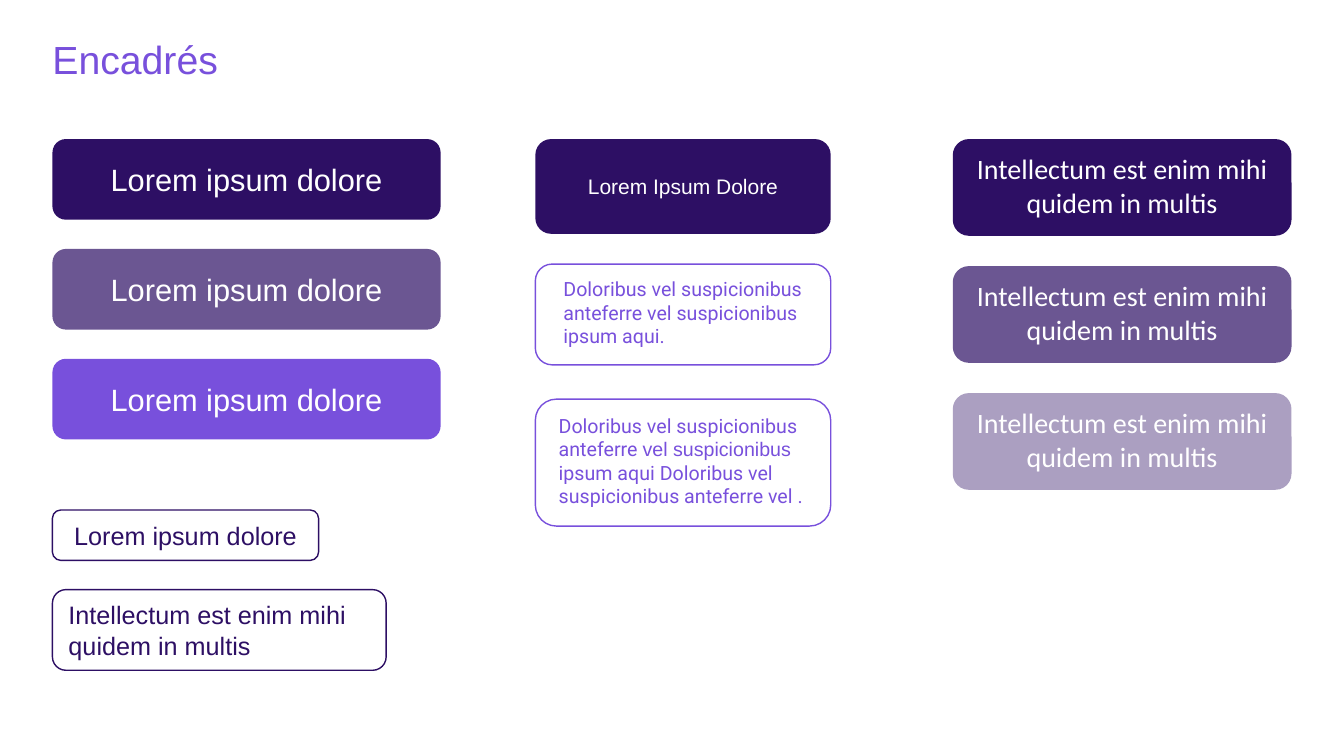
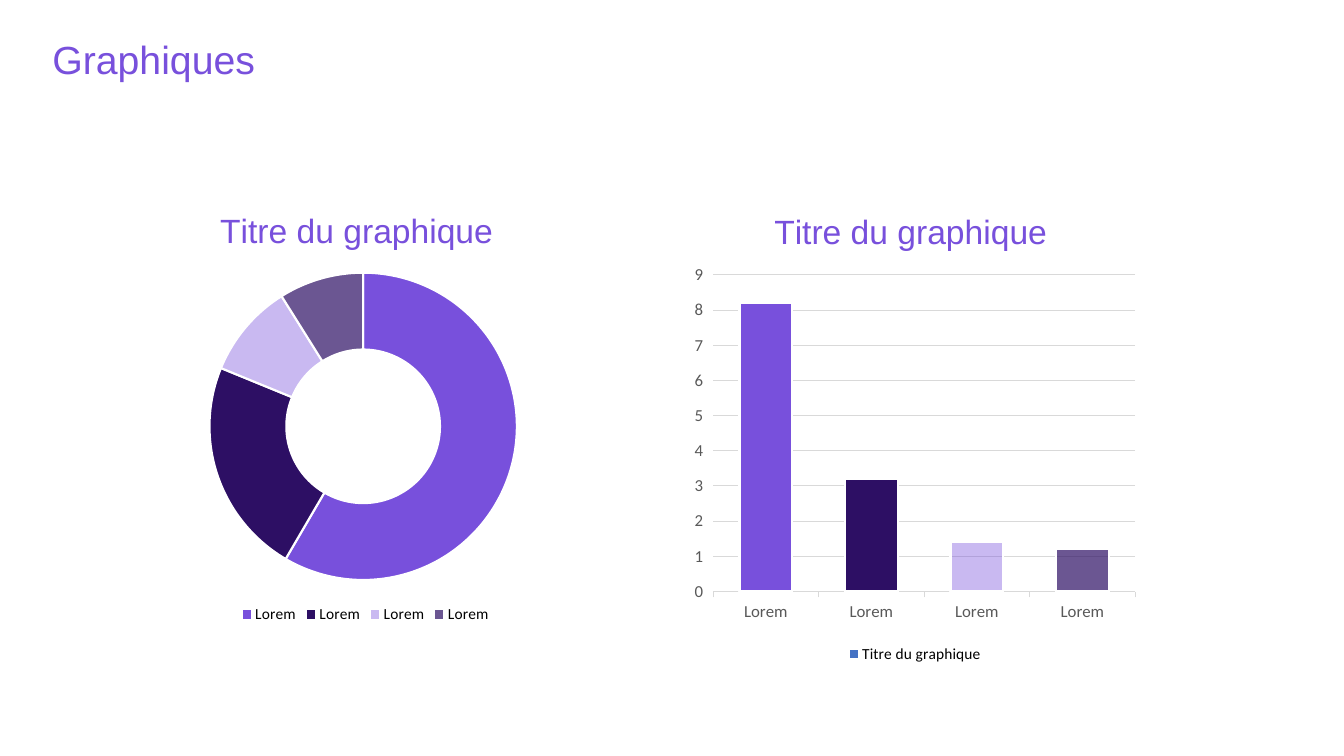
from lxml import etree
from pptx import Presentation
from pptx.chart.data import CategoryChartData
from pptx.dml.color import RGBColor
from pptx.enum import chart as ch, shapes, text
from pptx.oxml.ns import qn
from pptx.util import Inches, Pt

WHITE = RGBColor(0xFF, 0xFF, 0xFF)
BLACK = RGBColor(0x00, 0x00, 0x00)
VIOLET = RGBColor(0x78, 0x50, 0xDC)
INDIGO = RGBColor(0x2D, 0x0F, 0x64)
BLUE = RGBColor(0x44, 0x72, 0xC4)
GRAY = RGBColor(0x59, 0x59, 0x59)
GRID = RGBColor(0xD9, 0xD9, 0xD9)
POINT_FILLS = [(VIOLET, 100), (INDIGO, 100), (VIOLET, 40), (INDIGO, 70)]

LEFT, MID, RIGHT = 0.52, 5.31, 9.45
TOP = 1.38
NO_PAD = (0, 0, 0, 0)
PAD = (0.12, 0.08, 0.12, 0.12)
LOREM = "Lorem ipsum dolore"
INTELLECTUM = "Intellectum est enim mihi quidem in multis"
CHART_TITLE = "Titre du graphique"


def set_font(font, size, color, name="Arial"):
    font.size, font.name, font.bold = Pt(size), name, False
    font.color.rgb = color


def set_fill(fill, color, opacity=100):
    """Solid fill; opacity in percent."""
    fill.solid()
    fill.fore_color.rgb = color
    if opacity < 100:
        clr = fill._xPr.find(".//" + qn("a:srgbClr"))
        etree.SubElement(clr, qn("a:alpha"), val=str(opacity * 1000))


def set_line(line, color, width):
    line.color.rgb = color
    line.width = Pt(width)


def set_insets(tf, insets):
    tf.margin_left, tf.margin_top, tf.margin_right, tf.margin_bottom = map(Inches, insets)


def chart_layout(**values):
    """c:layout element from x, y, w, h as fractions of the chart."""
    layout = etree.Element(qn("c:layout"))
    manual = etree.SubElement(layout, qn("c:manualLayout"))
    if "w" in values:
        etree.SubElement(manual, qn("c:layoutTarget"), val="inner")
    for tag in ("xMode", "yMode"):
        etree.SubElement(manual, qn("c:" + tag), val="edge")
    for tag, value in values.items():
        etree.SubElement(manual, qn("c:" + tag), val=str(value))
    return layout


def place_chart_parts(chart, title_pos, plot_box):
    root = chart._chartSpace
    title, plot = (root.find(".//" + qn(tag)) for tag in ("c:title", "c:plotArea"))
    for part in (title, plot):
        for old in part.findall(qn("c:layout")):
            part.remove(old)
    title.find(qn("c:tx")).addnext(chart_layout(**dict(zip("xy", title_pos))))
    plot.insert(0, chart_layout(**dict(zip("xywh", plot_box))))


class Deck:
    def __init__(self):
        self.prs = Presentation()
        self.prs.slide_width, self.prs.slide_height = Inches(13.33), Inches(7.5)
        self.s = None

    def slide(self, title):
        self.s = self.prs.slides.add_slide(self.prs.slide_layouts[5])
        sp = self.s.shapes.title
        sp.left, sp.top, sp.width, sp.height = map(Inches, (LEFT, 0.4, 10.7, 0.42))
        tf = sp.text_frame
        tf.word_wrap = True
        tf.auto_size = text.MSO_AUTO_SIZE.NONE
        set_insets(tf, NO_PAD)
        p = tf.paragraphs[0]
        p.alignment, p.line_spacing = text.PP_ALIGN.LEFT, 0.9
        r = p.add_run()
        r.text = title
        set_font(r.font, 28, VIOLET)

    def box(self, at, content, size, font="Arial", fill=None, opacity=100,
            outline=None, center=True, insets=NO_PAD):
        """Rounded box, filled or outlined; content is a string or (text, font) runs."""
        sp = self.s.shapes.add_shape(shapes.MSO_SHAPE.ROUNDED_RECTANGLE, *map(Inches, at))
        sp.shadow.inherit = False
        if fill is None:
            sp.fill.background()
        else:
            set_fill(sp.fill, fill, opacity)
        if outline is None:
            sp.line.fill.background()
        else:
            set_line(sp.line, outline, 1)
        tf = sp.text_frame
        tf.word_wrap = True
        tf.vertical_anchor = text.MSO_ANCHOR.MIDDLE
        set_insets(tf, insets)
        p = tf.paragraphs[0]
        p.alignment = text.PP_ALIGN.CENTER if center else text.PP_ALIGN.LEFT
        for words, name in [(content, font)] if isinstance(content, str) else content:
            r = p.add_run()
            r.text = words
            set_font(r.font, size, outline or WHITE, name)

    def chart(self, kind, at, name, values, title_pos, plot_box):
        data = CategoryChartData()
        data.categories = ["Lorem"] * len(values)
        data.add_series(name, values)
        chart = self.s.shapes.add_chart(kind, *map(Inches, at), data).chart
        set_font(chart.font, 10, BLACK, "Calibri")
        chart.has_title = True
        r = chart.chart_title.text_frame.paragraphs[0].add_run()
        r.text = CHART_TITLE
        set_font(r.font, 24, VIOLET)
        chart.has_legend = True
        chart.legend.position = ch.XL_LEGEND_POSITION.BOTTOM
        chart.legend.include_in_layout = False
        set_font(chart.legend.font, 11, BLACK, "Calibri")
        series = chart.plots[0].series[0]
        set_fill(series.format.fill, BLUE)
        set_line(series.format.line, WHITE, 1.5)
        for i, (color, opacity) in enumerate(POINT_FILLS):
            fmt = series.points[i].format
            set_fill(fmt.fill, color, opacity)
            set_line(fmt.line, WHITE, 1.5)
        place_chart_parts(chart, title_pos, plot_box)
        return chart

    def column_chart(self, *args):
        chart = self.chart(ch.XL_CHART_TYPE.COLUMN_CLUSTERED, *args)
        chart.plots[0].gap_width = 100
        chart.plots[0].vary_by_categories = False
        cat, val = chart.category_axis, chart.value_axis
        for axis in (cat, val):
            set_font(axis.tick_labels.font, 12, GRAY, "Calibri")
            axis.major_tick_mark = ch.XL_TICK_MARK.OUTSIDE
        set_line(cat.format.line, GRID, 0.75)
        val.format.line.fill.background()
        set_line(val.major_gridlines.format.line, GRID, 0.75)
        val.minimum_scale, val.maximum_scale, val.major_unit = 0, 9, 1


def boxes_slide(deck):
    deck.slide("Encadrés")
    for i, (color, opacity) in enumerate([(INDIGO, 100), (INDIGO, 70), (VIOLET, 100)]):
        deck.box((LEFT, TOP + 1.09 * i, 3.85, 0.8), LOREM, 22, fill=color, opacity=opacity)
    deck.box((LEFT, 5.06, 2.64, 0.5), LOREM, 18, outline=INDIGO)
    deck.box((LEFT, 5.85, 3.31, 0.8), INTELLECTUM, 18, outline=INDIGO,
             center=False, insets=(0.12, 0, 0, 0))

    deck.box((MID, TOP, 2.93, 0.94), "Lorem Ipsum Dolore", 15, fill=INDIGO)
    short = [("Doloribus vel suspicionibus anteferre vel suspicionibus ipsum aqui.", "Roboto")]
    long = [("Doloribus vel suspicionibus anteferre ", "Roboto"),
            ("vel suspicionibus ", "Arial"),
            ("ipsum aqui Doloribus vel suspicionibus anteferre vel .", "Roboto")]
    for y, h, indent, runs in [(2.62, 1, 0.23, short), (3.96, 1.26, 0.17, long)]:
        deck.box((MID, y, 2.93, h), runs, 14, outline=VIOLET, center=False,
                 insets=(indent, *PAD[1:]))

    for i, opacity in enumerate([100, 70, 40]):
        deck.box((RIGHT, TOP + 1.26 * i, 3.36, 0.96), INTELLECTUM, 20, "Calibri",
                 fill=INDIGO, opacity=opacity, insets=PAD)


def charts_slide(deck):
    deck.slide("Graphiques")
    deck.chart(ch.XL_CHART_TYPE.DOUGHNUT, (1.35, 1.93, 4.55, 4.3), "Series 1",
               (59, 23, 10, 9), (0.17, 0.02), (0.16, 0.18, 0.67, 0.71))
    deck.column_chart((6.8, 1.93, 4.55, 4.69), CHART_TITLE,
                      (8.2, 3.2, 1.4, 1.2), (0.18, 0.02), (0.06, 0.17, 0.92, 0.67))


def main():
    deck = Deck()
    boxes_slide(deck)
    charts_slide(deck)
    deck.prs.save("out.pptx")


if __name__ == "__main__":
    main()
